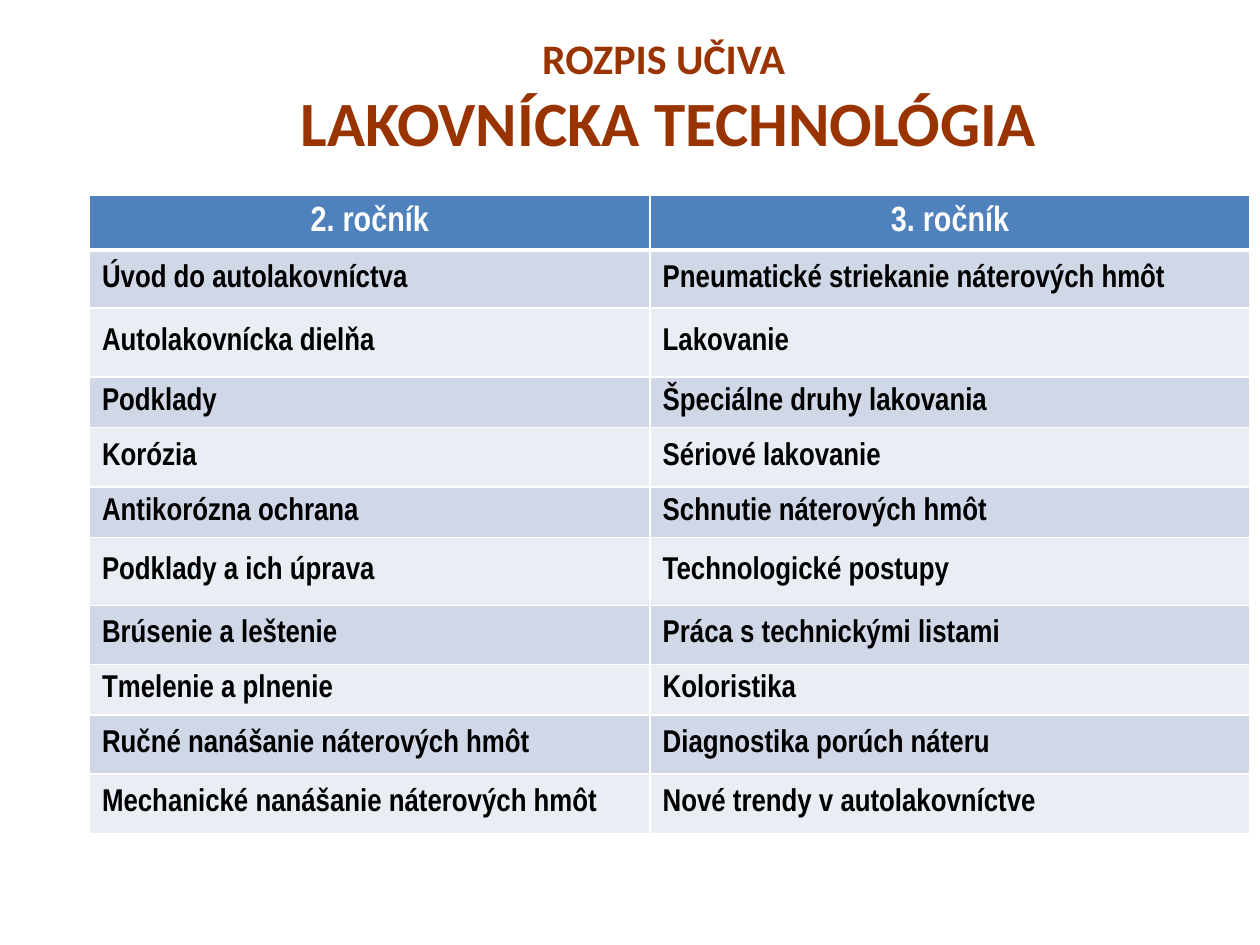
"""Build the syllabus slide for painting technology."""
from dataclasses import dataclass

from lxml import etree
from pptx import Presentation
from pptx.dml.color import RGBColor
from pptx.enum import text
from pptx.oxml import ns
from pptx.util import Inches, Pt

WHITE = "FFFFFF"
COLUMN_WIDTHS = (4.45, 4.76)
ROW_HEIGHTS = (0.42, 0.46, 0.55, 0.4, 0.47, 0.4, 0.54, 0.47, 0.4, 0.47, 0.47)
BANDS = ("D0D8E8", "E9EDF4")
TOPICS = (
    ("2. ročník", "3. ročník"),
    ("Úvod do autolakovníctva", "Pneumatické striekanie náterových hmôt"),
    ("Autolakovnícka dielňa", "Lakovanie"),
    ("Podklady", "Špeciálne druhy lakovania"),
    ("Korózia", "Sériové lakovanie"),
    ("Antikorózna ochrana", "Schnutie náterových hmôt"),
    ("Podklady a ich úprava", "Technologické postupy"),
    ("Brúsenie a leštenie", "Práca s technickými listami"),
    ("Tmelenie a plnenie", "Koloristika"),
    ("Ručné nanášanie náterových hmôt", "Diagnostika porúch náteru"),
    ("Mechanické nanášanie náterových hmôt", "Nové trendy v autolakovníctve"),
)


@dataclass(frozen=True)
class TextStyle:
    font: str
    size: int
    color: str
    align: text.PP_ALIGN


@dataclass(frozen=True)
class CellStyle:
    text: TextStyle
    fill: str
    top: int = 1
    bottom: int = 1


CENTER, LEFT = text.PP_ALIGN.CENTER, text.PP_ALIGN.LEFT
TITLE_LINES = (
    ("ROZPIS UČIVA ", TextStyle("Calibri", 24, "993300", CENTER)),
    ("LAKOVNÍCKA TECHNOLÓGIA", TextStyle("Calibri", 36, "993300", CENTER)),
)
YEAR_TEXT = TextStyle("Arial Narrow", 20, WHITE, CENTER)
TOPIC_TEXT = TextStyle("Arial Narrow", 18, "000000", LEFT)


def rgb(color: str) -> RGBColor:
    return RGBColor.from_string(color)


def write(paragraph, words: str, style: TextStyle) -> None:
    paragraph.add_run().text = words
    paragraph.alignment = style.align
    font = paragraph.font
    font.name, font.size, font.bold = style.font, Pt(style.size), True
    font.color.rgb = rgb(style.color)


def add_border(cell, side: str, width: int) -> None:
    line = etree.SubElement(cell._tc.get_or_add_tcPr(), ns.qn(f"a:ln{side}"), w=str(Pt(width)))
    fill = etree.SubElement(line, ns.qn("a:solidFill"))
    etree.SubElement(fill, ns.qn("a:srgbClr"), val=WHITE)


def draw_cell(cell, words: str, style: CellStyle) -> None:
    for side, width in zip("LRTB", (1, 1, style.top, style.bottom)):
        add_border(cell, side, width)
    cell.fill.solid()
    cell.fill.fore_color.rgb = rgb(style.fill)
    cell.vertical_anchor = text.MSO_ANCHOR.MIDDLE
    write(cell.text_frame.paragraphs[0], words, style.text)


def row_style(row: int) -> CellStyle:
    if row == 0:
        return CellStyle(YEAR_TEXT, "4F81BD", bottom=3)
    return CellStyle(TOPIC_TEXT, BANDS[(row - 1) % 2], top=3 if row == 1 else 1)


def draw_title(title) -> None:
    title.left, title.top = Inches(0.74), Inches(0.21)
    title.width, title.height = Inches(9.13), Inches(1.11)
    frame = title.text_frame
    frame.word_wrap = True
    frame.auto_size = text.MSO_AUTO_SIZE.SHAPE_TO_FIT_TEXT
    frame.vertical_anchor = text.MSO_ANCHOR.TOP
    for index, (words, style) in enumerate(TITLE_LINES):
        paragraph = frame.add_paragraph() if index else frame.paragraphs[0]
        write(paragraph, words, style)


def draw_syllabus(slide) -> None:
    syllabus = slide.shapes.add_table(
        len(TOPICS), len(COLUMN_WIDTHS), Inches(0.71), Inches(1.55),
        Inches(sum(COLUMN_WIDTHS)), Inches(sum(ROW_HEIGHTS))).table
    for column, width in zip(syllabus.columns, COLUMN_WIDTHS):
        column.width = Inches(width)
    for row, (topics, height) in enumerate(zip(TOPICS, ROW_HEIGHTS)):
        syllabus.rows[row].height = Inches(height)
        for column, topic in enumerate(topics):
            draw_cell(syllabus.cell(row, column), topic, row_style(row))


def main() -> None:
    deck = Presentation()
    deck.slide_width, deck.slide_height = Inches(10), Inches(7.5)
    slide = deck.slides.add_slide(deck.slide_layouts[5])
    draw_title(slide.shapes.title)
    draw_syllabus(slide)
    deck.save("out.pptx")


if __name__ == "__main__":
    main()
